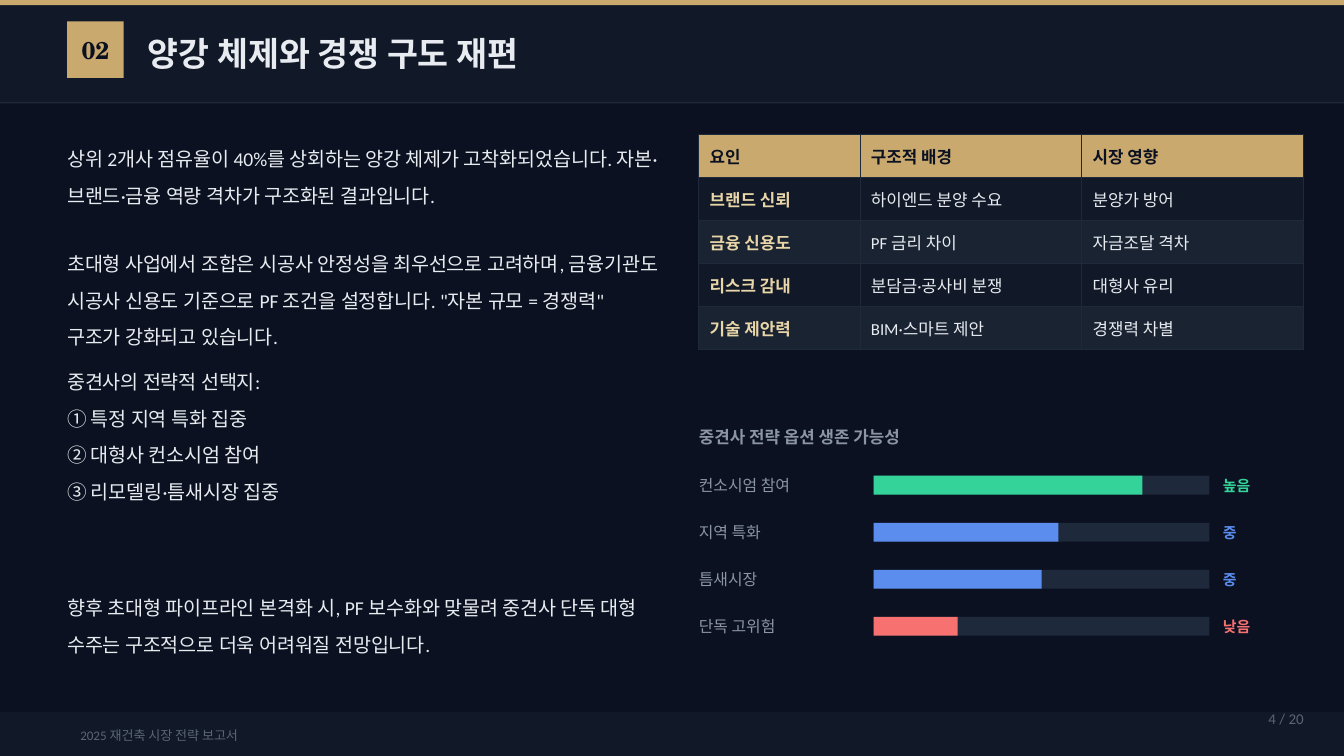
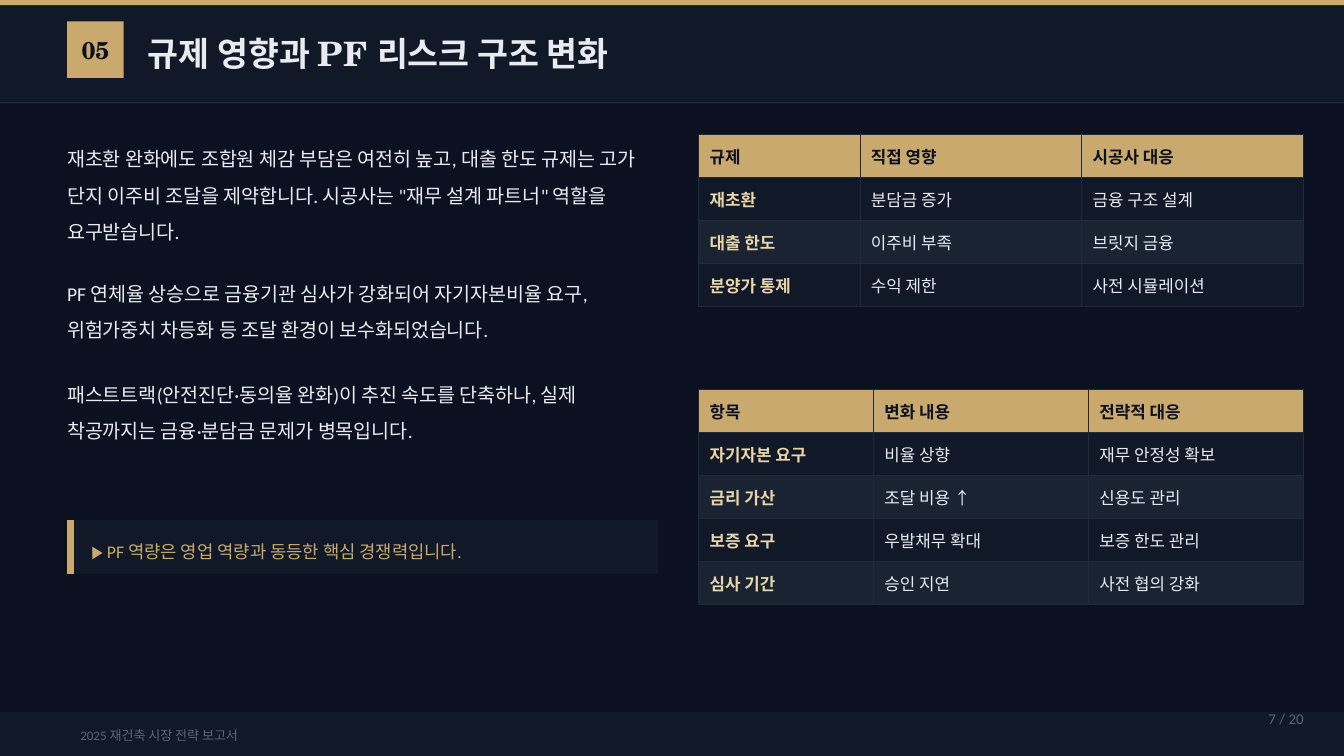
from typing import NamedTuple

from lxml import etree
from pptx import Presentation
from pptx.dml.color import RGBColor
from pptx.enum.shapes import MSO_SHAPE
from pptx.enum.text import MSO_ANCHOR, PP_ALIGN
from pptx.oxml.ns import qn
from pptx.util import Inches, Pt

RECTANGLE = MSO_SHAPE.RECTANGLE
TOP, MIDDLE = MSO_ANCHOR.TOP, MSO_ANCHOR.MIDDLE
LEFT, CENTER, RIGHT = PP_ALIGN.LEFT, PP_ALIGN.CENTER, PP_ALIGN.RIGHT

# Palette and fonts
NIGHT, PANEL, STRIPE, RULE = "0B1120", "111827", "1A2332", "1E293B"
GOLD, PALE_GOLD = "C9A96E", "E8D5A8"
LIGHT, GRAY, DIM = "E8ECF1", "8B95A5", "5A6577"
GREEN, BLUE, RED = "34D399", "5B8DEF", "F87171"
SERIF, SANS = "TeX Gyre Schola", "Calibri"

# The slide is a 16:9 grid, 100 columns wide with square cells
COLUMNS, ROWS = 100, 56.25
CELL = Inches(10) / COLUMNS
TABLE_ROW = 3.2
REPORT_NAME = "2025 재건축 시장 전략 보고서"
PAGE_TOTAL = 20


class Box(NamedTuple):
    """An area of the grid, in columns and rows."""
    left: float
    top: float
    width: float
    height: float

    def area(self, left, top, width, height):
        return Box(self.left + left, self.top + top, width, height)

    def lengths(self):
        return [round(value * CELL) for value in self]


HEADER = Box(0, 0, COLUMNS, 7.7)
BODY_LEFT = Box(5, 10, 44, 43)
BODY_RIGHT = Box(52, 10, 45, 43)
FOOTER = Box(0, 53, COLUMNS, ROWS - 53)


def color(hex_value):
    return RGBColor.from_string(hex_value)


def add_block(page, box, fill):
    block = page.shapes.add_shape(RECTANGLE, *box.lengths())
    block.shadow.inherit = False
    block.fill.solid()
    block.fill.fore_color.rgb = color(fill)
    block.line.fill.background()


def add_run(para, text, size, ink, bold=False, font=SANS):
    span = para.add_run()
    span.text = text
    span.font.name = font
    span.font.size = Pt(size)
    span.font.bold = bold
    span.font.color.rgb = color(ink)


def add_text(page, box, lines, size, ink, bold=False, font=SANS,
             align=LEFT, anchor=MIDDLE, spacing=None, inset=True):
    frame = page.shapes.add_textbox(*box.lengths()).text_frame
    frame.word_wrap = True
    frame.vertical_anchor = anchor
    if not inset:
        frame.margin_left = frame.margin_right = 0
        frame.margin_top = frame.margin_bottom = 0
    for index, line in enumerate(lines):
        para = frame.add_paragraph() if index else frame.paragraphs[0]
        para.alignment = align
        if spacing:
            para.line_spacing = spacing
        add_run(para, line, size, ink, bold, font)


def add_header(page, box, number, title):
    add_block(page, box.area(0, 0, box.width, 0.4), GOLD)
    add_block(page, box.area(0, 0.4, box.width, 7.2), PANEL)
    badge = box.area(5, 1.6, 4.2, 4.2)
    add_block(page, badge, GOLD)
    add_text(page, badge, [number], 13, NIGHT, True, SERIF, CENTER, inset=False)
    add_text(page, box.area(11, 1.2, 84, 5.5), [title], 18, LIGHT, True, SERIF,
             inset=False)
    add_block(page, box.area(0, 7.6, box.width, 0.1), RULE)


def add_footer(page, box, page_number):
    add_block(page, box, PANEL)
    add_text(page, box.area(5, 0.3, 40, 2.8), [REPORT_NAME], 7, DIM)
    add_text(page, box.area(88, -1, 10, 3), [f"{page_number} / {PAGE_TOTAL}"],
             8, DIM, align=RIGHT)


def add_body(page, box, passages):
    """Each passage is its row in the box, its height and its lines."""
    for row, height, lines in passages:
        add_text(page, box.area(0, row, box.width, height), lines, 10.5, LIGHT,
                 anchor=TOP, spacing=1.55, inset=False)


def add_callout(page, box, message):
    add_block(page, box, PANEL)
    add_block(page, box.area(0, 0, 0.5, box.height), GOLD)
    add_text(page, box.area(1.8, 0, box.width - 3, box.height), [message],
             9.5, GOLD, spacing=1.4, inset=False)


def set_borders(cell):
    properties = cell._tc.get_or_add_tcPr()
    for side in ("lnL", "lnR", "lnT", "lnB"):
        line = etree.SubElement(properties, qn(f"a:{side}"), w=str(Pt(0.5)))
        fill = etree.SubElement(line, qn("a:solidFill"))
        etree.SubElement(fill, qn("a:srgbClr"), val=RULE)


def add_grid(page, box, widths, records):
    """Table with a gold heading row, striped body and pale gold first column."""
    frame = box.area(0, 0, sum(widths), TABLE_ROW * len(records))
    table = page.shapes.add_table(len(records), len(widths),
                                  *frame.lengths()).table
    table.horz_banding = False
    for column, width in zip(table.columns, widths):
        column.width = round(width * CELL)
    for row, record in enumerate(records):
        table.rows[row].height = round(TABLE_ROW * CELL)
        fill = (PANEL if row % 2 else STRIPE) if row else GOLD
        for column, text in enumerate(record):
            cell = table.cell(row, column)
            set_borders(cell)
            cell.fill.solid()
            cell.fill.fore_color.rgb = color(fill)
            cell.vertical_anchor = MIDDLE
            cell.margin_left = cell.margin_right = Inches(0.08)
            cell.margin_top = cell.margin_bottom = Inches(0.06)
            ink = (LIGHT if column else PALE_GOLD) if row else NIGHT
            add_run(cell.text_frame.paragraphs[0], text, 9, ink,
                    bold=row == 0 or column == 0)


def add_meters(page, box, heading, meters):
    """Each meter is its label, filled share, rating and colour."""
    add_text(page, box.area(0, 0, box.width, 3), [heading], 9, GRAY, True,
             inset=False)
    track_width = 25
    for index, (label, share, rating, ink) in enumerate(meters):
        row = box.area(0, 4 + 3.5 * index, box.width, 2.2)
        add_text(page, row.area(0, 0, 12, 2.2), [label], 8.5, GRAY, inset=False)
        for width, fill in ((track_width, RULE), (track_width * share, ink)):
            add_block(page, row.area(13, 0.4, width, 1.4), fill)
        add_text(page, row.area(39, 0, 5, 2.2), [rating], 8, ink, True,
                 inset=False)


def add_page(deck, number, title, page_number):
    page = deck.slides.add_slide(deck.slide_layouts[6])
    page.background.fill.solid()
    page.background.fill.fore_color.rgb = color(NIGHT)
    add_header(page, HEADER, number, title)
    add_footer(page, FOOTER, page_number)
    return page


def build_competition(deck):
    page = add_page(deck, "02", "양강 체제와 경쟁 구도 재편", 4)
    add_body(page, BODY_LEFT, [
        (0, 6, ["상위 2개사 점유율이 40%를 상회하는 양강 체제가 고착화되었습니다. "
                "자본·브랜드·금융 역량 격차가 구조화된 결과입니다."]),
        (7.8, 7, ["초대형 사업에서 조합은 시공사 안정성을 최우선으로 고려하며, "
                  "금융기관도 시공사 신용도 기준으로 PF 조건을 설정합니다. "
                  "\"자본 규모 = 경쟁력\" 구조가 강화되고 있습니다."]),
        (16.6, 8, ["중견사의 전략적 선택지:",
                   "① 특정 지역 특화 집중",
                   "② 대형사 컨소시엄 참여",
                   "③ 리모델링·틈새시장 집중"]),
        (33.4, 5.5, ["향후 초대형 파이프라인 본격화 시, PF 보수화와 맞물려 중견사 "
                     "단독 대형 수주는 구조적으로 더욱 어려워질 전망입니다."]),
    ])
    add_grid(page, BODY_RIGHT, (12, 16.5, 16.5), [
        ("요인", "구조적 배경", "시장 영향"),
        ("브랜드 신뢰", "하이엔드 분양 수요", "분양가 방어"),
        ("금융 신용도", "PF 금리 차이", "자금조달 격차"),
        ("리스크 감내", "분담금·공사비 분쟁", "대형사 유리"),
        ("기술 제안력", "BIM·스마트 제안", "경쟁력 차별"),
    ])
    add_meters(page, BODY_RIGHT.area(0, 21, 45, 17), "중견사 전략 옵션 생존 가능성", [
        ("컨소시엄 참여", 0.8, "높음", GREEN),
        ("지역 특화", 0.55, "중", BLUE),
        ("틈새시장", 0.5, "중", BLUE),
        ("단독 고위험", 0.25, "낮음", RED),
    ])


def build_regulation(deck):
    page = add_page(deck, "05", "규제 영향과 PF 리스크 구조 변화", 7)
    add_body(page, BODY_LEFT, [
        (0, 7, ["재초환 완화에도 조합원 체감 부담은 여전히 높고, 대출 한도 규제는 "
                "고가 단지 이주비 조달을 제약합니다. 시공사는 "
                "\"재무 설계 파트너\" 역할을 요구받습니다."]),
        (10, 6, ["PF 연체율 상승으로 금융기관 심사가 강화되어 자기자본비율 요구, "
                 "위험가중치 차등화 등 조달 환경이 보수화되었습니다."]),
        (17.5, 5.5, ["패스트트랙(안전진단·동의율 완화)이 추진 속도를 단축하나, "
                     "실제 착공까지는 금융·분담금 문제가 병목입니다."]),
    ])
    add_callout(page, BODY_LEFT.area(0, 28.7, 44, 4),
                "▶ PF 역량은 영업 역량과 동등한 핵심 경쟁력입니다.")
    add_grid(page, BODY_RIGHT, (12, 16.5, 16.5), [
        ("규제", "직접 영향", "시공사 대응"),
        ("재초환", "분담금 증가", "금융 구조 설계"),
        ("대출 한도", "이주비 부족", "브릿지 금융"),
        ("분양가 통제", "수익 제한", "사전 시뮬레이션"),
    ])
    add_grid(page, BODY_RIGHT.area(0, 19, 45, 16), (13, 16, 16), [
        ("항목", "변화 내용", "전략적 대응"),
        ("자기자본 요구", "비율 상향", "재무 안정성 확보"),
        ("금리 가산", "조달 비용 ↑", "신용도 관리"),
        ("보증 요구", "우발채무 확대", "보증 한도 관리"),
        ("심사 기간", "승인 지연", "사전 협의 강화"),
    ])


def main():
    deck = Presentation()
    deck.slide_width = round(COLUMNS * CELL)
    deck.slide_height = round(ROWS * CELL)
    build_competition(deck)
    build_regulation(deck)
    deck.save("out.pptx")


if __name__ == "__main__":
    main()
